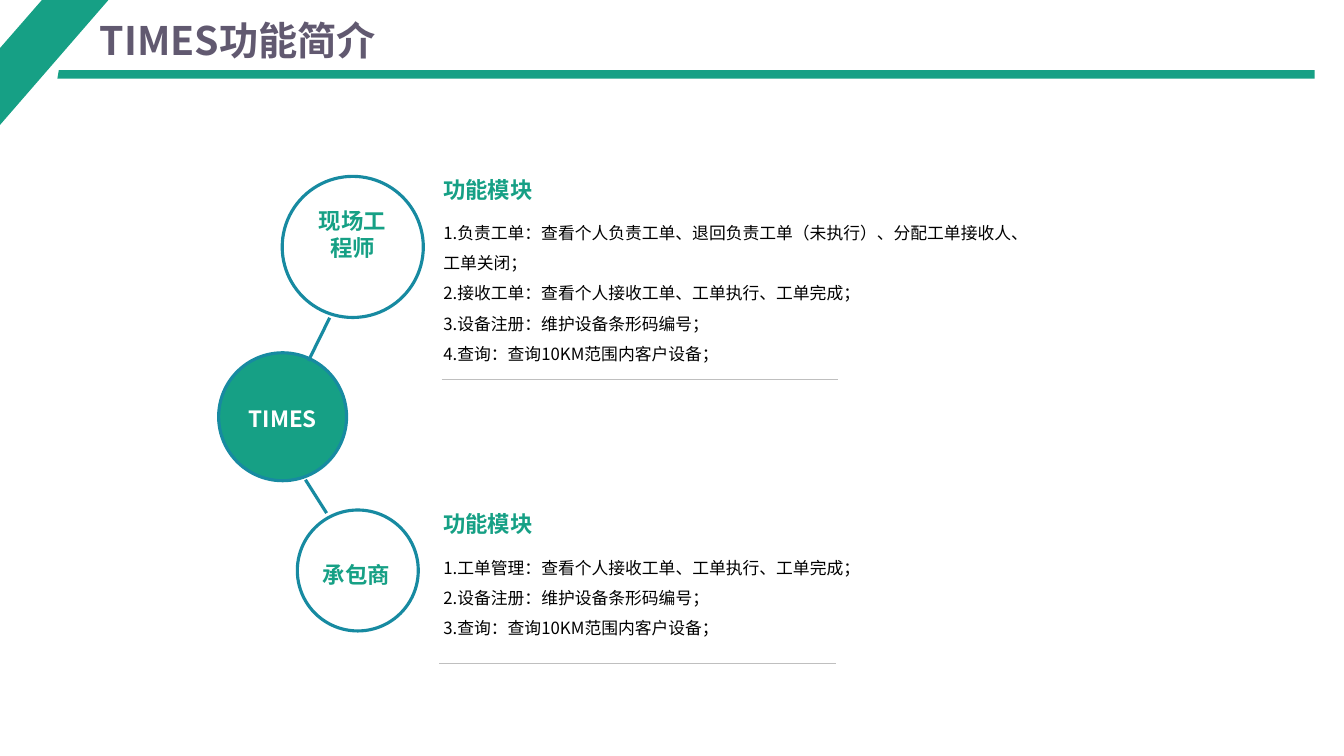
from lxml.etree import SubElement
from pptx import Presentation
from pptx.dml.color import RGBColor
from pptx.enum.shapes import MSO_CONNECTOR, MSO_SHAPE
from pptx.enum.text import MSO_ANCHOR, PP_ALIGN
from pptx.oxml.ns import qn
from pptx.util import Pt

GREEN, TEAL, WHITE = "16A085", "178AA1", "FFFFFF"
PURPLE, GREY, BLACK = "615970", "BFBFBF", "000000"


def color(hex_value):
    return RGBColor.from_string(hex_value)


class SlideBuilder:
    font = "Noto Sans CJK SC"
    outline = 2.25

    def __init__(self, slide):
        self.shapes = slide.shapes

    def polygon(self, points, fill):
        corners = [(Pt(x), Pt(y)) for x, y in points]
        builder = self.shapes.build_freeform(*corners[0], scale=1.0)
        builder.add_line_segments(corners[1:], close=True)
        outline = builder.convert_to_shape()
        outline.shadow.inherit = False
        outline.fill.solid()
        outline.fill.fore_color.rgb = color(fill)
        outline.line.fill.background()

    def circle(self, left, top, diameter, fill):
        oval = self.shapes.add_shape(
            MSO_SHAPE.OVAL, Pt(left), Pt(top), Pt(diameter), Pt(diameter))
        oval.shadow.inherit = False
        oval.fill.solid()
        oval.fill.fore_color.rgb = color(fill)
        oval.line.color.rgb = color(TEAL)
        oval.line.width = Pt(self.outline)

    def line(self, x1, y1, x2, y2, stroke, width):
        link = self.shapes.add_connector(
            MSO_CONNECTOR.STRAIGHT, Pt(x1), Pt(y1), Pt(x2), Pt(y2))
        link.line.color.rgb = color(stroke)
        link.line.width = Pt(width)
        SubElement(link._element.spPr, qn("a:effectLst"))

    def text(self, box, content, size, ink, bold=False, anchor=MSO_ANCHOR.TOP,
             align=PP_ALIGN.LEFT, wrap=True, spacing=1.0, side=7.2):
        frame = self.shapes.add_textbox(*map(Pt, box)).text_frame
        frame.word_wrap = wrap
        frame.vertical_anchor = anchor
        frame.margin_left = frame.margin_right = Pt(side)
        frame.margin_top = frame.margin_bottom = Pt(3.6)
        frame.text = content
        for paragraph in frame.paragraphs:
            paragraph.alignment = align
            paragraph.line_spacing = spacing
            for run in paragraph.runs:
                run.font.size = Pt(size)
                run.font.bold = bold
                run.font.name = self.font
                run.font.color.rgb = color(ink)
                # Chinese characters take the East Asian typeface
                SubElement(run.font._element, qn("a:ea"), typeface=self.font)

    def heading(self, box, content, ink=GREEN, align=PP_ALIGN.LEFT):
        self.text(box, content, 16, ink, bold=True, anchor=MSO_ANCHOR.BOTTOM,
                  align=align, wrap=False)


def main():
    prs = Presentation()
    prs.slide_width, prs.slide_height = Pt(960), Pt(540)
    page = SlideBuilder(prs.slides.add_slide(prs.slide_layouts[6]))

    # Corner band, title rule and title
    page.polygon([(30, 0), (77.5, 0), (0, 89.3), (0, 34.4)], GREEN)
    page.polygon([(41, 56.2), (939, 56.2), (939, 50.2), (42, 50.2)], GREEN)
    page.text((71.3, 13.7, 357, 29.5), "TIMES功能简介", 28, PURPLE, bold=True,
              anchor=MSO_ANCHOR.MIDDLE, side=0)

    # Role circles: left, top, diameter, fill, label, label colour, label place
    roles = [
        (201.6, 126, 100.8, WHITE, "现场工程师", GREEN, (218.2, 157.7)),
        (156.2, 252, 91.4, GREEN, "TIMES", WHITE, (168.5, 279.4)),
        (212.4, 364.3, 86.4, WHITE, "承包商", GREEN, (221, 391)),
    ]
    for left, top, diameter, fill, label, ink, place in roles:
        page.circle(left, top, diameter, fill)
        page.heading((*place, 67, 32.4), label, ink, PP_ALIGN.CENTER)

    # Links from the hub to both roles
    page.line(235.5, 227, 220.3, 257.8, TEAL, page.outline)
    page.line(218.2, 342.7, 233.3, 366.5, TEAL, page.outline)

    # Function modules: heading top, list top, list height, width, rule x and y
    modules = [
        (94.3, 148.3, 121.7, 422.6, 315.4, 270.9, [
            "1.负责工单：查看个人负责工单、退回负责工单（未执行）、分配工单接收人、工单关闭；",
            "2.接收工单：查看个人接收工单、工单执行、工单完成；",
            "3.设备注册：维护设备条形码编号；",
            "4.查询：查询10KM范围内客户设备；",
        ]),
        (344.2, 387.4, 94.3, 462.2, 313.9, 474, [
            "1.工单管理：查看个人接收工单、工单执行、工单完成；",
            "2.设备注册：维护设备条形码编号；",
            "3.查询：查询10KM范围内客户设备；",
        ]),
    ]
    for head_top, list_top, height, width, rule_x, rule_y, items in modules:
        page.heading((309.6, head_top, width, list_top - head_top), "功能模块")
        page.text((309.6, list_top, width, height), "\n".join(items), 12, BLACK,
                  spacing=1.5)
        page.line(rule_x, rule_y, rule_x + 283, rule_y, GREY, 0.25)

    prs.save("out.pptx")


if __name__ == "__main__":
    main()
